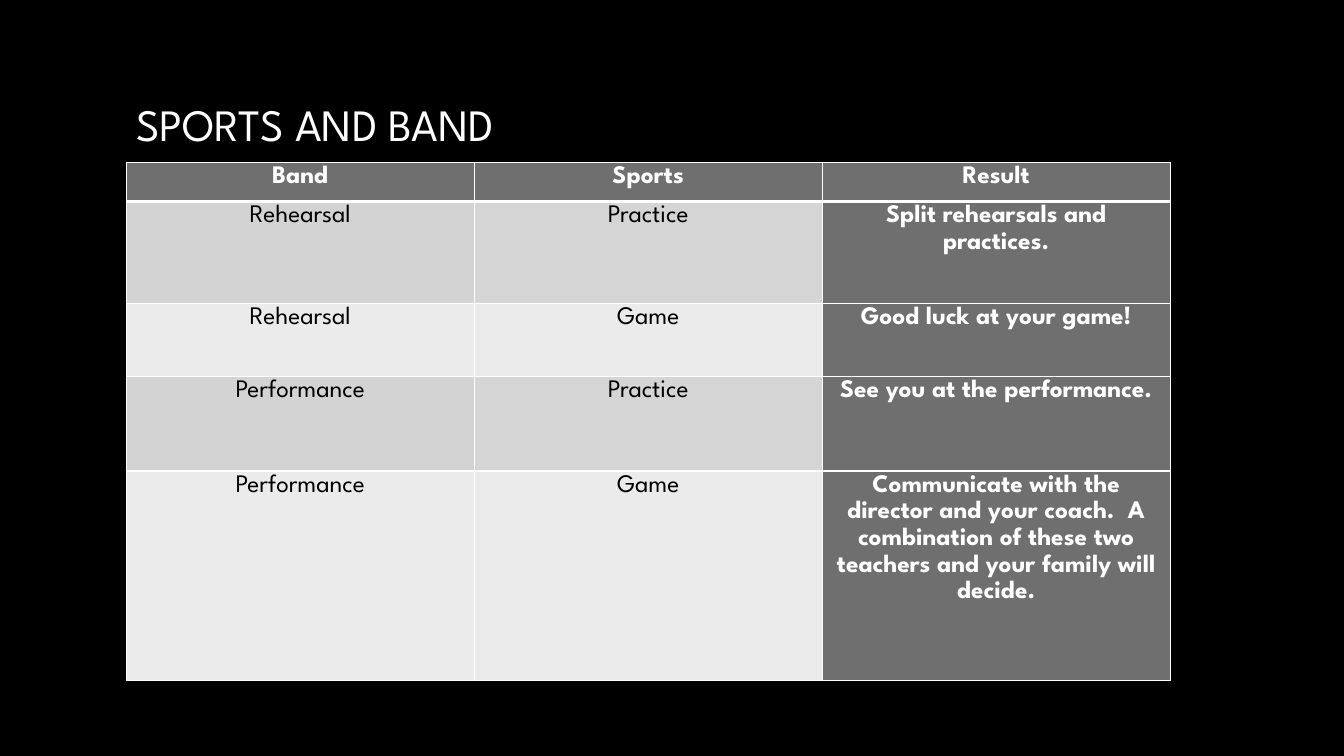
from lxml.etree import SubElement as Sub
from pptx import Presentation
from pptx.dml.color import RGBColor as Rgb
from pptx.enum.text import MSO_ANCHOR as Anchor, PP_ALIGN as Align
from pptx.oxml.ns import qn
from pptx.util import Cm, Pt

FONT = "League Spartan"
BLACK = Rgb(0x00, 0x00, 0x00)
WHITE = Rgb(0xFF, 0xFF, 0xFF)
GREY = Rgb(0x6F, 0x6F, 0x6F)
PALE = Rgb(0xEB, 0xEB, 0xEB)
BAND = Rgb(0xD3, 0xD3, 0xD3)
SPORT = Rgb(0xD5, 0xD5, 0xD5)

LEFT = Cm(3.18)
WIDTH = Cm(8.77)
HIGH = [Cm(0.99), Cm(2.57), Cm(1.83), Cm(2.39), Cm(5.28)]
ROWS = [
    ("Band", "Sports", "Result"),
    ("Rehearsal", "Practice", "Split rehearsals and practices."),
    ("Rehearsal", "Game", "Good luck at your game!"),
    ("Performance", "Practice", "See you at the performance."),
    ("Performance", "Game", "Communicate with the director and your coach.  "
     "A combination of these two teachers and your family will decide."),
]


def style(para, size, color, bold=False):
    """Set the font of every run in a paragraph."""
    for run in para.runs:
        font = run.font
        font.name, font.size, font.bold = FONT, Pt(size), bold
        font.color.rgb = color


def edge(cell, side, width):
    """Draw a white border on one side of a cell."""
    line = Sub(cell._tc.get_or_add_tcPr(), qn(f"a:ln{side}"), w=str(Pt(width)))
    fill = Sub(line, qn("a:solidFill"))
    Sub(fill, qn("a:srgbClr"), val=str(WHITE))


def tint(row, col):
    """Return the fill of a cell from its place in the table."""
    if row == 0 or col == 2:
        return GREY
    if row % 2 == 0:
        return PALE
    return (BAND, SPORT)[col]


def paint(cell, text, row, col):
    """Write one cell with its text, borders and fill."""
    color = tint(row, col)
    dark = color == GREY
    cell.margin_left = cell.margin_right = Cm(0.19)
    cell.margin_top = cell.margin_bottom = 0
    cell.text_frame.text = text
    para = cell.text_frame.paragraphs[0]
    para.alignment = Align.CENTER
    para.line_spacing = 1.15
    para.space_after = Pt(10)
    style(para, 18, WHITE if dark else BLACK, dark)
    for side in "LRTB":
        thick = (row, side) in ((0, "B"), (1, "T"))
        edge(cell, side, 3 if thick else 1)
    cell.fill.solid()
    cell.fill.fore_color.rgb = color


def add_title(slide, text):
    """Add the slide title."""
    box = slide.shapes.add_textbox(LEFT, Cm(0.48), Cm(27.51), Cm(5.28))
    frame = box.text_frame
    frame.word_wrap = True
    frame.vertical_anchor = Anchor.MIDDLE
    frame.text = text
    style(frame.paragraphs[0], 32, WHITE)


def add_grid(slide):
    """Add the table of clashes between band and sports."""
    count = len(ROWS[0])
    grid = slide.shapes.add_table(
        len(ROWS), count, LEFT, Cm(4.09), WIDTH * count, sum(HIGH)).table
    for col in grid.columns:
        col.width = WIDTH
    for r, (high, texts) in enumerate(zip(HIGH, ROWS)):
        grid.rows[r].height = high
        for c, text in enumerate(texts):
            paint(grid.cell(r, c), text, r, c)


def main():
    """Build and save the slide."""
    deck = Presentation()
    deck.slide_width, deck.slide_height = Cm(33.87), Cm(19.05)
    slide = deck.slides.add_slide(deck.slide_layouts[6])
    back = slide.background.fill
    back.solid()
    back.fore_color.rgb = BLACK
    add_title(slide, "SPORTS AND BAND")
    add_grid(slide)
    deck.save("out.pptx")


if __name__ == "__main__":
    main()
